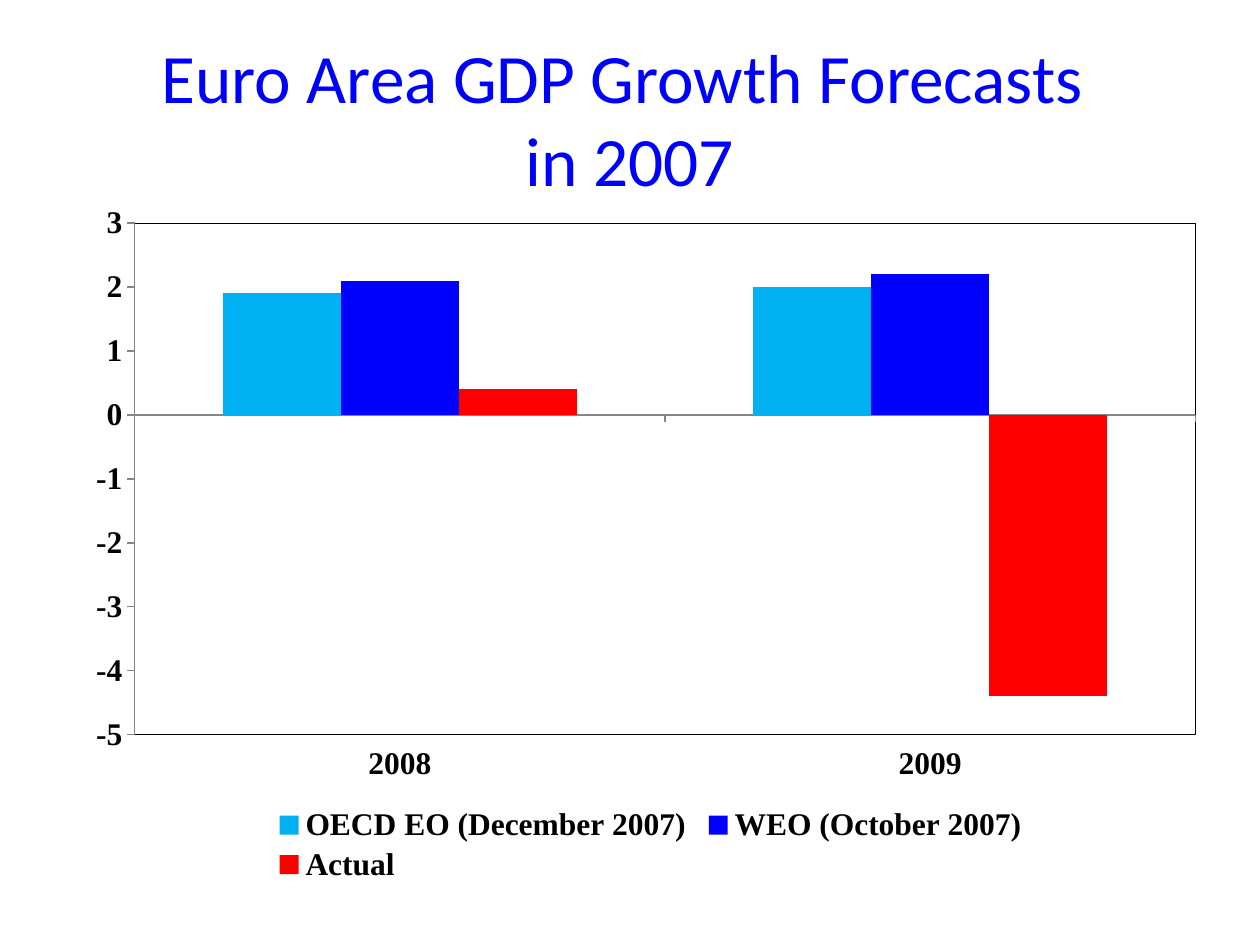
from lxml import etree
from pptx import Presentation
from pptx.chart.data import CategoryChartData
from pptx.dml.color import RGBColor
from pptx.enum.chart import XL_CHART_TYPE, XL_LEGEND_POSITION, XL_TICK_LABEL_POSITION, XL_TICK_MARK
from pptx.enum.text import MSO_ANCHOR, PP_ALIGN
from pptx.oxml import parse_xml
from pptx.oxml.ns import nsdecls, qn
from pptx.util import Pt

COLUMNS = XL_CHART_TYPE.COLUMN_CLUSTERED
BOTTOM = XL_LEGEND_POSITION.BOTTOM
LABELS_LOW = XL_TICK_LABEL_POSITION.LOW
TICK_OUTSIDE, TICK_NONE = XL_TICK_MARK.OUTSIDE, XL_TICK_MARK.NONE
MIDDLE = MSO_ANCHOR.MIDDLE
CENTER = PP_ALIGN.CENTER
PX = 914400 / 126
COLORS = {"title": "0000FF", "text": "000000", "axis": "868686", "frame": "000000"}
SERIES = [
    ("OECD EO (December 2007)", (1.9, 2.0), "00B0F0"),
    ("WEO (October 2007)", (2.1, 2.2), "0000FF"),
    ("Actual", (0.4, -4.4), "FF0000"),
]


def px(*lengths):
    return [round(length * PX) for length in lengths]


def set_layout(parent, index, target, x, y, width, height):
    """Place a chart part by fractions of the chart's size."""
    for old in parent.findall(qn("c:layout")):
        parent.remove(old)
    layout = etree.Element(qn("c:layout"))
    manual = etree.SubElement(layout, qn("c:manualLayout"))
    settings = [("xMode", "edge"), ("yMode", "edge"),
                ("x", x), ("y", y), ("w", width), ("h", height)]
    if target:
        settings.insert(0, ("layoutTarget", target))
    for name, value in settings:
        etree.SubElement(manual, qn(f"c:{name}")).set("val", str(value))
    parent.insert(index, layout)


deck = Presentation()
deck.slide_width, deck.slide_height = px(1260, 945)
page = deck.slides.add_slide(deck.slide_layouts[5])

# Title
title = page.shapes.title
title.left, title.top, title.width, title.height = px(63, 38, 1134, 158)
title.text_frame.text = "Euro Area GDP Growth Forecasts \vin 2007"
title.text_frame.vertical_anchor = MIDDLE
para = title.text_frame.paragraphs[0]
para.alignment = CENTER
para.font.name = "Calibri"
para.font.size = Pt(39.6)
para.font.color.rgb = RGBColor.from_string(COLORS["title"])

# Chart
data = CategoryChartData()
data.categories = ["2008", "2009"]
for name, values, _ in SERIES:
    data.add_series(name, values)
chart = page.shapes.add_chart(COLUMNS, *px(73, 193, 1144, 701), data).chart
chart.has_title = False
chart.font.name = "Times New Roman"
chart.font.size = Pt(18)
chart.font.bold = True
chart.font.color.rgb = RGBColor.from_string(COLORS["text"])

plot = chart.plots[0]
plot.gap_width = 150
plot.overlap = 0
plot.vary_by_categories = False
for series, (_, _, color) in zip(plot.series, SERIES):
    series.invert_if_negative = False
    series.format.fill.solid()
    series.format.fill.fore_color.rgb = RGBColor.from_string(color)

# Axes
for axis in (chart.category_axis, chart.value_axis):
    axis.has_major_gridlines = False
    axis.major_tick_mark = TICK_OUTSIDE
    axis.minor_tick_mark = TICK_NONE
    axis.format.line.width = Pt(0.75)
    axis.format.line.color.rgb = RGBColor.from_string(COLORS["axis"])
chart.category_axis.tick_label_position = LABELS_LOW
chart.value_axis.minimum_scale = -5
chart.value_axis.maximum_scale = 3
chart.value_axis.major_unit = 1
chart.value_axis.tick_labels.number_format = "#,##0"
chart.value_axis.tick_labels.number_format_is_linked = False

# Legend and plot frame
chart.has_legend = True
chart.legend.position = BOTTOM
chart.legend.include_in_layout = False
legend = chart.element.find(".//" + qn("c:legend"))
set_layout(legend, 1, None, 0.17, 0.87, 0.67, 0.12)
plot_area = chart.element.find(".//" + qn("c:plotArea"))
set_layout(plot_area, 0, "inner", 0.054, 0.043, 0.927, 0.73)
plot_area.append(parse_xml(
    f'<c:spPr {nsdecls("c", "a")}><a:noFill/><a:ln w="9525"><a:solidFill>'
    f'<a:srgbClr val="{COLORS["frame"]}"/></a:solidFill></a:ln></c:spPr>'))

deck.save("out.pptx")
